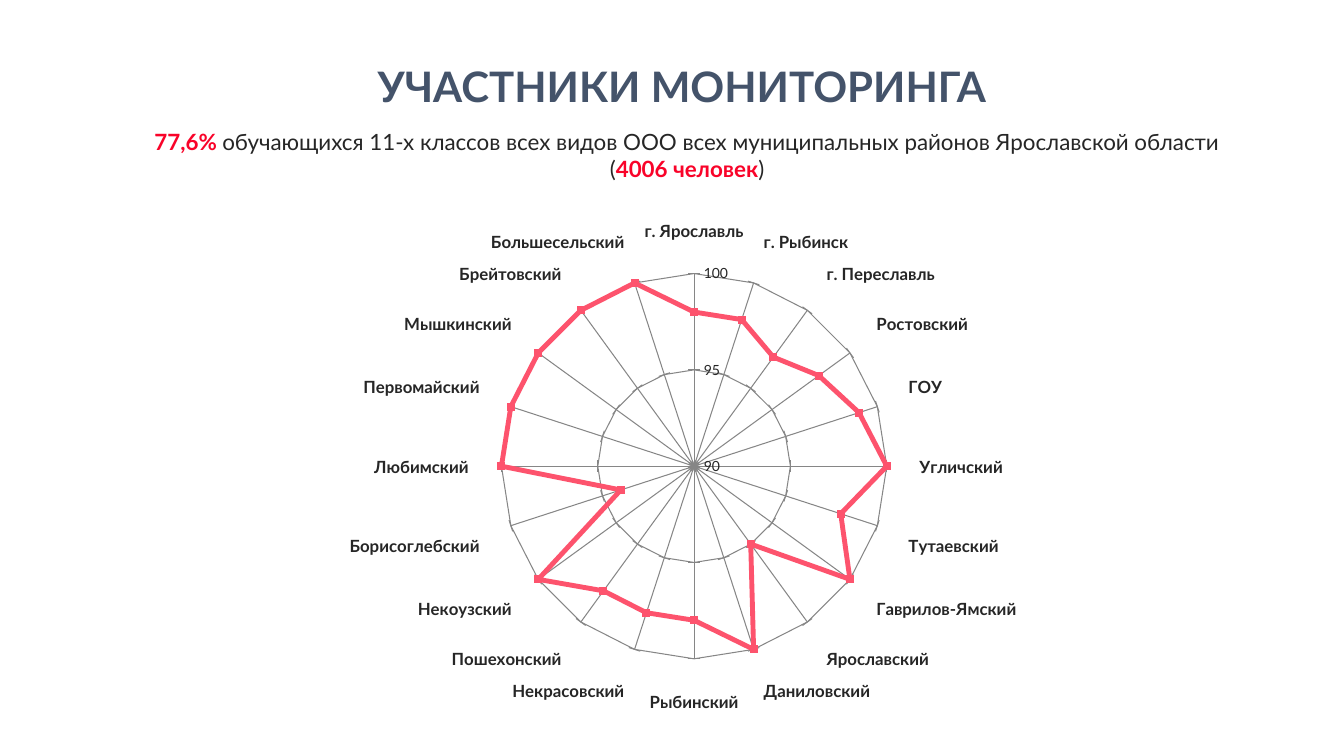
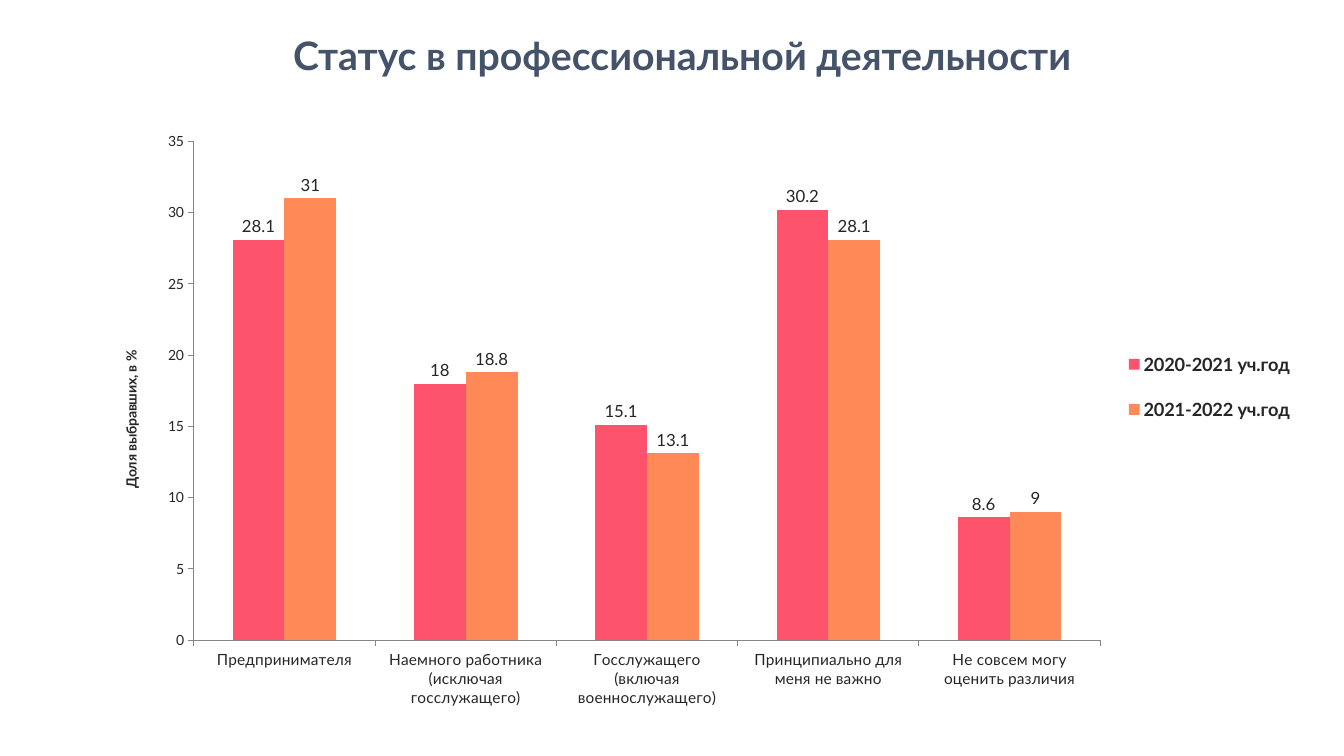
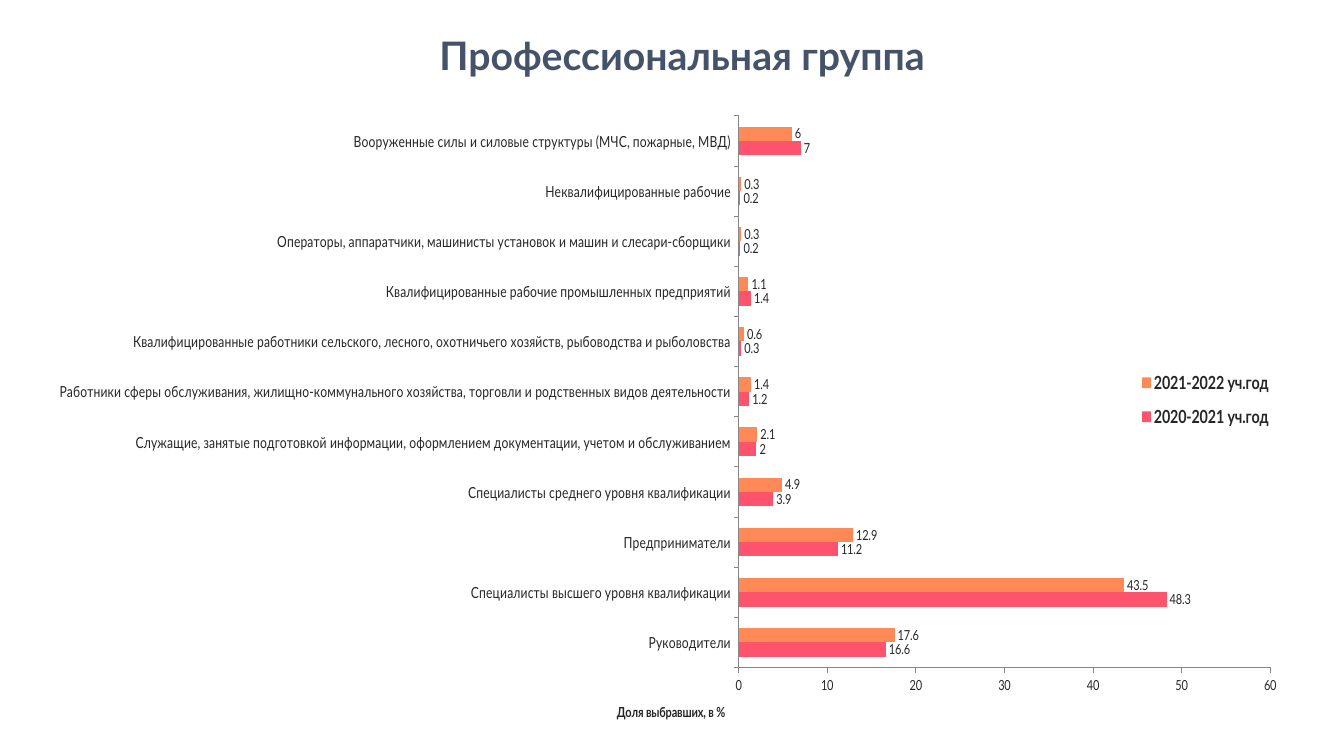
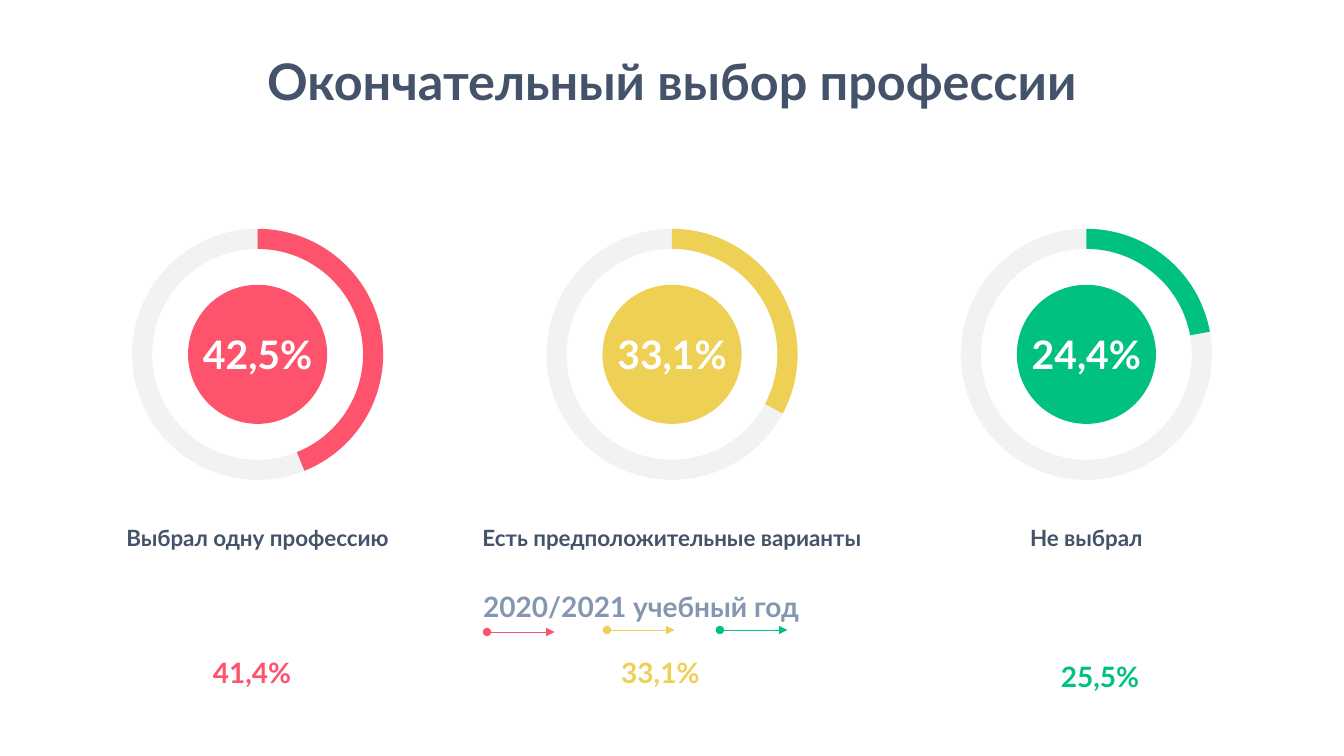
"""Build four slides on a survey of school leavers' career choices."""
from lxml import etree
from pptx import Presentation
from pptx.chart.data import CategoryChartData
from pptx.dml.color import RGBColor
from pptx.enum.chart import XL_CHART_TYPE, XL_LABEL_POSITION, XL_LEGEND_POSITION, XL_MARKER_STYLE, XL_TICK_MARK
from pptx.enum.shapes import MSO_CONNECTOR, MSO_SHAPE
from pptx.enum.text import MSO_ANCHOR, MSO_AUTO_SIZE, PP_ALIGN
from pptx.oxml.ns import qn
from pptx.util import Inches, Pt

RADAR, COLUMNS, BARS = XL_CHART_TYPE.RADAR_MARKERS, XL_CHART_TYPE.COLUMN_CLUSTERED, XL_CHART_TYPE.BAR_CLUSTERED
OUTSIDE, RIGHT, SQUARE = XL_LABEL_POSITION.OUTSIDE_END, XL_LEGEND_POSITION.RIGHT, XL_MARKER_STYLE.SQUARE
TICK_OUT, TICK_CROSS = XL_TICK_MARK.OUTSIDE, XL_TICK_MARK.CROSS
DONUT, ARC, OVAL = MSO_SHAPE.DONUT, MSO_SHAPE.BLOCK_ARC, MSO_SHAPE.OVAL
STRAIGHT, CENTER = MSO_CONNECTOR.STRAIGHT, PP_ALIGN.CENTER
MIDDLE, FIT = MSO_ANCHOR.MIDDLE, MSO_AUTO_SIZE.SHAPE_TO_FIT_TEXT

FONT = "Lato"
COLORS = {
    "title": "44536A", "text": "262626", "accent": "F90329", "muted": "8496B0", "axis": "868686",
    "pink": "FD536D", "orange": "FF8957", "yellow": "EED054", "green": "00C182",
    "track": "F2F2F2", "white": "FFFFFF",
}

PARTICIPANTS_TITLE = "УЧАСТНИКИ МОНИТОРИНГА"
PARTICIPANTS_SUMMARY = [
    [("77,6% ", "accent", True),
     ("обучающихся 11-х классов всех видов ООО всех муниципальных районов Ярославской области", "text", False)],
    [("(", "text", False), ("4006 человек", "accent", True), (")", "text", False)],
]
DISTRICTS = {
    "г. Ярославль": 98, "г. Рыбинск": 98, "г. Переславль": 97, "Ростовский": 98, "ГОУ": 99,
    "Угличский": 100, "Тутаевский": 98, "Гаврилов-Ямский": 100, "Ярославский": 95, "Даниловский": 100,
    "Рыбинский": 98, "Некрасовский": 98, "Пошехонский": 98, "Некоузский": 100, "Борисоглебский": 94,
    "Любимский": 100, "Первомайский": 100, "Мышкинский": 100, "Брейтовский": 100, "Большесельский": 100,
}

YEARS = [("2020-2021 уч.год", "pink"), ("2021-2022 уч.год", "orange")]
SHARE_TITLE = "Доля выбравших, в %"
COMPARISONS = [
    {
        "title": "Статус в профессиональной деятельности",
        "kind": COLUMNS, "box": (1, 1.2, 11.95, 5.93), "label_size": 12,
        "legend": (0.85, 0.35, 0.14, 0.19), "plot": None, "axis_title": None,
        "rows": [
            ("Предпринимателя", 28.1, 31),
            ("Наемного работника (исключая госслужащего)", 18, 18.8),
            ("Госслужащего (включая военнослужащего)", 15.1, 13.1),
            ("Принципиально для меня не важно", 30.2, 28.1),
            ("Не совсем могу оценить различия", 8.6, 9),
        ],
    },
    {
        "title": "Профессиональная группа",
        "kind": BARS, "box": (0.59, 0.99, 12.23, 6.2), "label_size": 10,
        "legend": (0.84, 0.42, 0.14, 0.13), "plot": (0.428, 0.026, 0.549, 0.892), "axis_title": (0.3, 0.97),
        "rows": [
            ("Руководители", 16.6, 17.6),
            ("Специалисты высшего уровня квалификации", 48.3, 43.5),
            ("Предприниматели", 11.2, 12.9),
            ("Специалисты среднего уровня квалификации", 3.9, 4.9),
            ("Служащие, занятые подготовкой информации, оформлением документации, учетом и обслуживанием", 2, 2.1),
            ("Работники сферы обслуживания, жилищно-коммунального хозяйства, торговли "
             "и родственных видов деятельности", 1.2, 1.4),
            ("Квалифицированные работники сельского, лесного, охотничьего хозяйств, "
             "рыбоводства и рыболовства", 0.3, 0.6),
            ("Квалифицированные рабочие промышленных предприятий", 1.4, 1.1),
            ("Операторы, аппаратчики, машинисты установок и машин и слесари-сборщики", 0.2, 0.3),
            ("Неквалифицированные рабочие", 0.2, 0.3),
            ("Вооруженные силы и силовые структуры (МЧС, пожарные, МВД)", 7, 6),
        ],
    },
]

CHOICE_TITLE = "Окончательный выбор профессии"
PREVIOUS_YEAR = "2020/2021 учебный год"
CHOICES = [
    {"label": "Выбрал одну профессию", "share": "42,5%", "sweep": 158.1, "color": "pink",
     "before": "41,4%", "before_at": (1.16, 6.37), "arrow": (4.83, 6.27)},
    {"label": "Есть предположительные варианты", "share": "33,1%", "sweep": 118.1, "color": "yellow",
     "before": "33,1%", "before_at": (5.21, 6.37), "arrow": (6.02, 6.25)},
    {"label": "Не выбрал", "share": "24,4%", "sweep": 79.6, "color": "green",
     "before": "25,5%", "before_at": (9.57, 6.41), "arrow": (7.14, 6.25)},
]
RING_LEFT, RING_TOP, RING_STEP, RING_SIZE, DISC_SIZE = 1.31, 2.27, 4.11, 2.49, 1.38
RING_WIDTH = 0.08
ARROW_LENGTH = 0.67


def rgb(name):
    return RGBColor.from_string(COLORS[name])


def style(font, color="text", **values):
    font.name = FONT
    font.color.rgb = rgb(color)
    for key, value in values.items():
        setattr(font, key, value)


def write(frame, paragraphs, size, spacing=1.0):
    for index, runs in enumerate(paragraphs):
        paragraph = frame.paragraphs[0] if index == 0 else frame.add_paragraph()
        paragraph.alignment, paragraph.line_spacing = CENTER, spacing
        for text, color, bold in runs:
            run = paragraph.add_run()
            run.text = text
            style(run.font, color, size=Pt(size), bold=bold)


def add_text(slide, box, paragraphs, size, spacing=1.0):
    frame = slide.shapes.add_textbox(*map(Inches, box)).text_frame
    frame.word_wrap, frame.auto_size = True, FIT
    write(frame, paragraphs, size, spacing)


def add_line_of_text(slide, box, text, color, size, spacing=1.0):
    add_text(slide, box, [[(text, color, True)]], size, spacing)


def add_title(slide, text, top, size, spacing=1.5, left=0.48):
    add_line_of_text(slide, (left, top, 12.57, 0.72), text, "title", size, spacing)


def add_figure(slide, kind, box, color, adjustments=()):
    figure = slide.shapes.add_shape(kind, *map(Inches, box))
    figure.shadow.inherit = False
    figure.fill.solid()
    figure.fill.fore_color.rgb = rgb(color)
    figure.line.fill.background()
    for index, value in enumerate(adjustments):
        figure.adjustments[index] = value
    return figure


def add_arrow(slide, left, top, color):
    arrow = slide.shapes.add_connector(STRAIGHT, *map(Inches, (left, top, left + ARROW_LENGTH, top)))
    arrow.line.color.rgb = rgb(color)
    arrow.line.width = Pt(0.5)
    properties = arrow.line._get_or_add_ln()
    for tag, end in (("a:headEnd", "oval"), ("a:tailEnd", "triangle")):
        etree.SubElement(properties, qn(tag), type=end)
    etree.SubElement(arrow._element.spPr, qn("a:effectLst"))


def place(element, index, fractions, inner=False):
    for old in element.findall(qn("c:layout")):
        element.remove(old)
    layout = etree.Element(qn("c:layout"))
    element.insert(index, layout)
    manual = etree.SubElement(layout, qn("c:manualLayout"))
    values = [("layoutTarget", "inner")] if inner else []
    values += [("xMode", "edge"), ("yMode", "edge"), *zip("xywh", fractions)]
    for tag, value in values:
        etree.SubElement(manual, qn(f"c:{tag}"), val=str(value))


def add_chart(slide, kind, box, categories, series, size):
    data = CategoryChartData()
    data.categories = categories
    for name, values in series:
        data.add_series(name, values)
    chart = slide.shapes.add_chart(kind, *map(Inches, box), data).chart
    chart.has_title = chart.has_legend = False
    style(chart.font, size=Pt(size))
    for axis in (chart.category_axis, chart.value_axis):
        axis.major_tick_mark = TICK_OUT
        axis.format.line.color.rgb = rgb("axis")
        axis.format.line.width = Pt(0.75)
    return chart


def build_participants(slide):
    add_text(slide, (1.23, 1.22, 11.17, 0.64), PARTICIPANTS_SUMMARY, 16)
    add_title(slide, PARTICIPANTS_TITLE, 0.3, 30)
    chart = add_chart(slide, RADAR, (1.47, 2.09, 10.61, 5.07), list(DISTRICTS),
                      [("Series 1", list(DISTRICTS.values()))], 18)
    districts, scale = chart.category_axis, chart.value_axis
    for axis in (districts, scale):
        axis.has_major_gridlines = True
        axis.major_gridlines.format.line.color.rgb = rgb("axis")
        axis.major_gridlines.format.line.width = Pt(0.75)
    style(districts.tick_labels.font, size=Pt(12), bold=True)
    style(scale.tick_labels.font, size=Pt(10))
    for key, value in {"minimum_scale": 90, "maximum_scale": 100, "major_unit": 5,
                       "major_tick_mark": TICK_CROSS}.items():
        setattr(scale, key, value)
    share = chart.plots[0].series[0]
    share.smooth = False
    share.format.line.color.rgb = rgb("pink")
    share.format.line.width = Pt(3.5)
    share.marker.style, share.marker.size = SQUARE, 5
    share.marker.format.fill.solid()
    share.marker.format.fill.fore_color.rgb = rgb("pink")
    share.marker.format.line.color.rgb = rgb("pink")


def build_comparison(slide, content):
    add_title(slide, content["title"], 0.03, 28)
    categories, *columns = zip(*content["rows"])
    chart = add_chart(slide, content["kind"], content["box"], categories,
                      [(name, values) for (name, _), values in zip(YEARS, columns)], 10)
    style(chart.category_axis.tick_labels.font, size=Pt(11))
    shares = chart.value_axis
    shares.has_major_gridlines = False
    style(shares.tick_labels.font, size=Pt(10))
    caption = shares.axis_title.text_frame.paragraphs[0].add_run()
    caption.text = SHARE_TITLE
    style(caption.font, size=Pt(10), bold=True)
    if content["axis_title"]:
        place(shares.axis_title._element, 1, content["axis_title"])
    if content["plot"]:
        place(chart._chartSpace.chart.plotArea, 0, content["plot"], inner=True)
    chart.has_legend = True
    chart.legend.position = RIGHT
    chart.legend.include_in_layout = False
    style(chart.legend.font, size=Pt(13), bold=True)
    place(chart.legend._element, 1, content["legend"])
    plot = chart.plots[0]
    plot.vary_by_categories, plot.gap_width, plot.overlap = False, 150, 0
    for year, (_, color) in zip(plot.series, YEARS):
        year.format.fill.solid()
        year.format.fill.fore_color.rgb = rgb(color)
        labels = year.data_labels
        labels.show_value, labels.position = True, OUTSIDE
        style(labels.font, size=Pt(content["label_size"]))


def build_choices(slide):
    add_title(slide, CHOICE_TITLE, 0.45, 36, 1.0, left=0.38)
    inset = (RING_SIZE - DISC_SIZE) / 2
    for index, choice in enumerate(CHOICES):
        left, color = RING_LEFT + index * RING_STEP, choice["color"]
        ring = (left, RING_TOP, RING_SIZE, RING_SIZE)
        add_figure(slide, DONUT, ring, "track", [RING_WIDTH])
        end = (choice["sweep"] - 90) % 360
        add_figure(slide, ARC, ring, color, [270 * 0.6, end * 0.6, RING_WIDTH])
        disc = add_figure(slide, OVAL, (left + inset, RING_TOP + inset, DISC_SIZE, DISC_SIZE), color)
        disc.text_frame.word_wrap = False
        disc.text_frame.vertical_anchor = MIDDLE
        write(disc.text_frame, [[(choice["share"], "white", True)]], 28)
        add_line_of_text(slide, (left + RING_SIZE / 2 - 2.15, 5.15, 4.3, 0.37), choice["label"], "title", 16)
        add_line_of_text(slide, (*choice["before_at"], 2.68, 0.48), choice["before"], color, 20, 1.25)
        add_arrow(slide, *choice["arrow"], color)
    add_line_of_text(slide, (2.58, 5.72, 7.56, 0.48), PREVIOUS_YEAR, "muted", 20, 1.25)


def main():
    deck = Presentation()
    deck.slide_width, deck.slide_height = Inches(13.33), Inches(7.5)
    blank = deck.slide_layouts[6]
    build_participants(deck.slides.add_slide(blank))
    for content in COMPARISONS:
        build_comparison(deck.slides.add_slide(blank), content)
    build_choices(deck.slides.add_slide(blank))
    deck.save("out.pptx")


if __name__ == "__main__":
    main()
